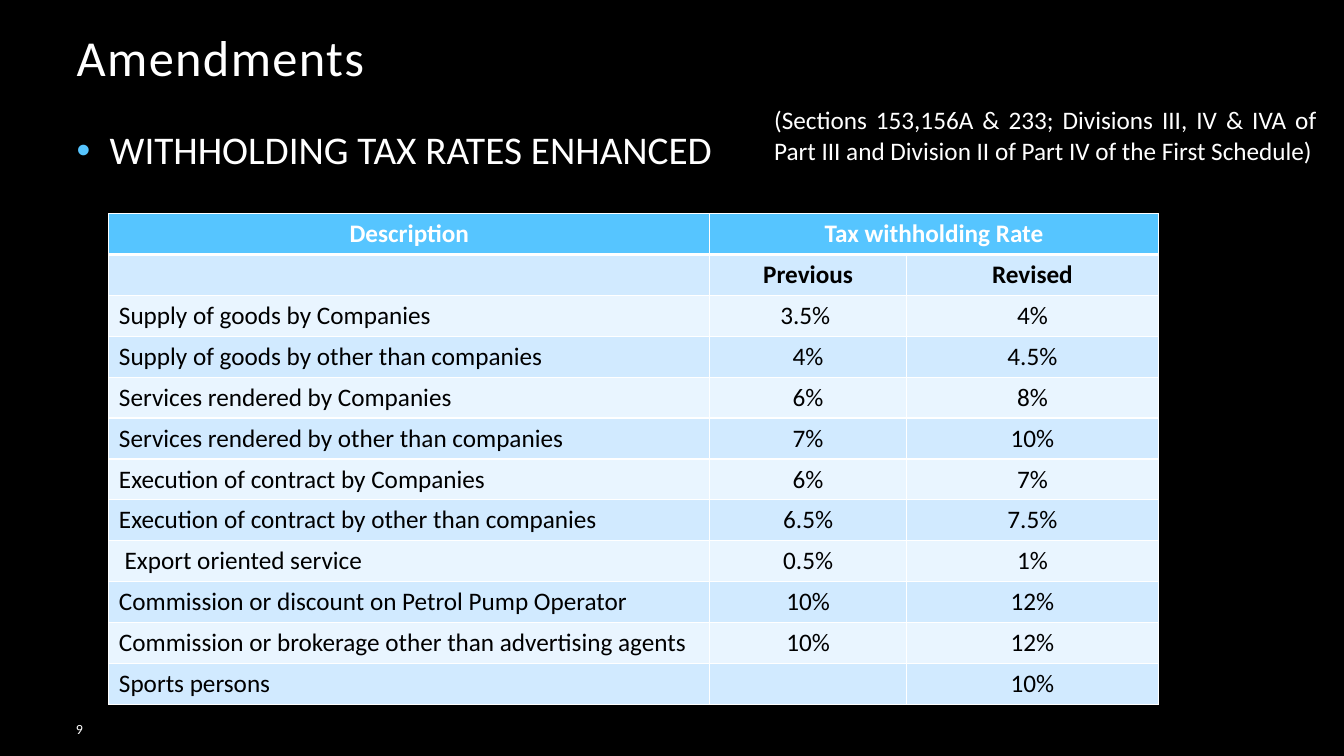
"""Build the withholding tax rates slide."""
from dataclasses import dataclass

from lxml.etree import SubElement
from pptx import Presentation
from pptx.dml.color import RGBColor as Color
from pptx.enum.text import MSO_ANCHOR as Anchor, MSO_AUTO_SIZE as AutoSize, PP_ALIGN as Align
from pptx.oxml.ns import qn
from pptx.util import Inches, Pt


@dataclass(frozen=True)
class Theme:
    font: str = "Calibri"
    background: str = "000000"
    light: str = "FFFFFF"
    dark: str = "000000"
    accent: str = "56C5FF"
    bands: tuple[str, str] = ("E9F5FF", "D1EAFF")
    title_size: int = 36
    body_size: int = 28
    text_size: int = 18
    number_size: int = 10
    rule: int = 1
    header_rule: int = 3


@dataclass(frozen=True)
class Label:
    text: str
    left: float
    top: float
    width: float
    height: float
    size: int
    align: Align = Align.LEFT
    anchor: Anchor = Anchor.TOP


@dataclass(frozen=True)
class Rate:
    description: str
    previous: str
    revised: str
    align: Align = Align.LEFT


THEME = Theme()
TITLE = Label("Amendments", 0.66, -0.58, 10, 1.5, THEME.title_size, anchor=Anchor.BOTTOM)
BODY = Label(" WITHHOLDING TAX RATES ENHANCED", 0.66, 1.25, 12, 5.33, THEME.body_size)
NUMBER = Label("9", 0, 7.08, 0.92, 0.3, THEME.number_size, Align.RIGHT, Anchor.MIDDLE)
SECTIONS = Label(
    "(Sections 153,156A & 233; Divisions III, IV & IVA of Part III "
    "and Division II of Part IV of the First Schedule)",
    7.58, 0.99, 5.58, 1.01, THEME.text_size, Align.JUSTIFY)
COLUMN_WIDTHS = (5.96, 1.95, 2.5)
ROW_HEIGHT = 4.87 / 12
RATES = (
    Rate("Description", "Tax withholding Rate", "", Align.CENTER),
    Rate("", "Previous", "Revised"),
    Rate("Supply of goods by Companies", "3.5% ", "4%"),
    Rate("Supply of goods by other than companies", "4%", "4.5%"),
    Rate("Services rendered by Companies", "6%", "8%"),
    Rate("Services rendered by other than companies", "7%", "10%"),
    Rate("Execution of contract by Companies", "6%", "7%"),
    Rate("Execution of contract by other than companies", "6.5%", "7.5%"),
    Rate(" Export oriented service", "0.5%", "1%"),
    Rate("Commission or discount on Petrol Pump Operator", "10%", "12%", Align.JUSTIFY),
    Rate("Commission or brokerage other than advertising agents", "10%", "12%", Align.JUSTIFY),
    Rate("Sports persons", "", "10%"),
)


def style_paragraph(para, size: int, color: str, align: Align, bold: bool = False) -> None:
    para.alignment = align
    para.font.name = THEME.font
    para.font.size = Pt(size)
    para.font.bold = bold
    para.font.color.rgb = Color.from_string(color)


def add_bullet(para) -> None:
    properties = para._p.get_or_add_pPr()
    properties.set("marL", str(Inches(0.24)))
    properties.set("indent", str(Inches(-0.24)))
    color = SubElement(properties, qn("a:buClr"))
    SubElement(color, qn("a:srgbClr"), val=THEME.accent)
    SubElement(properties, qn("a:buFont"), typeface="Arial")
    SubElement(properties, qn("a:buChar"), char="•")


def write_label(box, label: Label, bullet: bool = False):
    box.left, box.top = Inches(label.left), Inches(label.top)
    box.width, box.height = Inches(label.width), Inches(label.height)
    frame = box.text_frame
    frame.text = label.text
    frame.word_wrap = True
    frame.auto_size = AutoSize.NONE
    frame.vertical_anchor = label.anchor
    para = frame.paragraphs[0]
    if bullet:
        add_bullet(para)
    style_paragraph(para, label.size, THEME.light, label.align)
    return para


def add_label(slide, label: Label) -> None:
    write_label(slide.shapes.add_textbox(0, 0, 0, 0), label)


def add_borders(cell, row: int) -> None:
    properties = cell._tc.get_or_add_tcPr()
    widths = {"L": THEME.rule, "R": THEME.rule,
              "T": THEME.header_rule if row == 1 else THEME.rule,
              "B": THEME.header_rule if row == 0 else THEME.rule}
    for side, width in widths.items():
        line = SubElement(properties, qn(f"a:ln{side}"), w=str(Pt(width)))
        fill = SubElement(line, qn("a:solidFill"))
        SubElement(fill, qn("a:srgbClr"), val=THEME.light)


def write_cell(cell, text: str, row: int, align: Align) -> None:
    header = row == 0
    add_borders(cell, row)
    cell.fill.solid()
    cell.fill.fore_color.rgb = Color.from_string(THEME.accent if header else THEME.bands[row % 2])
    cell.text = text
    style_paragraph(cell.text_frame.paragraphs[0], THEME.text_size,
                    THEME.light if header else THEME.dark, align, bold=row < 2)


def add_rates(slide) -> None:
    table = slide.shapes.add_table(
        len(RATES), len(COLUMN_WIDTHS), Inches(1.08), Inches(2.12),
        Inches(sum(COLUMN_WIDTHS)), Inches(ROW_HEIGHT * len(RATES))).table
    for column, width in zip(table.columns, COLUMN_WIDTHS):
        column.width = Inches(width)
    for row, rate in enumerate(RATES):
        table.rows[row].height = Inches(ROW_HEIGHT)
        write_cell(table.cell(row, 0), rate.description, row, rate.align)
        write_cell(table.cell(row, 1), rate.previous, row, Align.CENTER)
        write_cell(table.cell(row, 2), rate.revised, row, Align.CENTER)
    table.cell(0, 1).merge(table.cell(0, 2))


def main() -> None:
    deck = Presentation()
    deck.slide_width, deck.slide_height = Inches(13.33), Inches(7.5)
    slide = deck.slides.add_slide(deck.slide_layouts[1])
    slide.background.fill.solid()
    slide.background.fill.fore_color.rgb = Color.from_string(THEME.background)
    title = write_label(slide.shapes.title, TITLE)
    title.line_spacing = 0.9
    title.runs[0]._r.get_or_add_rPr().set("spc", "100")
    body = write_label(slide.placeholders[1], BODY, bullet=True)
    body.line_spacing = 0.9
    body.space_before = Pt(0)
    add_label(slide, NUMBER)
    add_rates(slide)
    add_label(slide, SECTIONS)
    deck.save("out.pptx")


if __name__ == "__main__":
    main()
